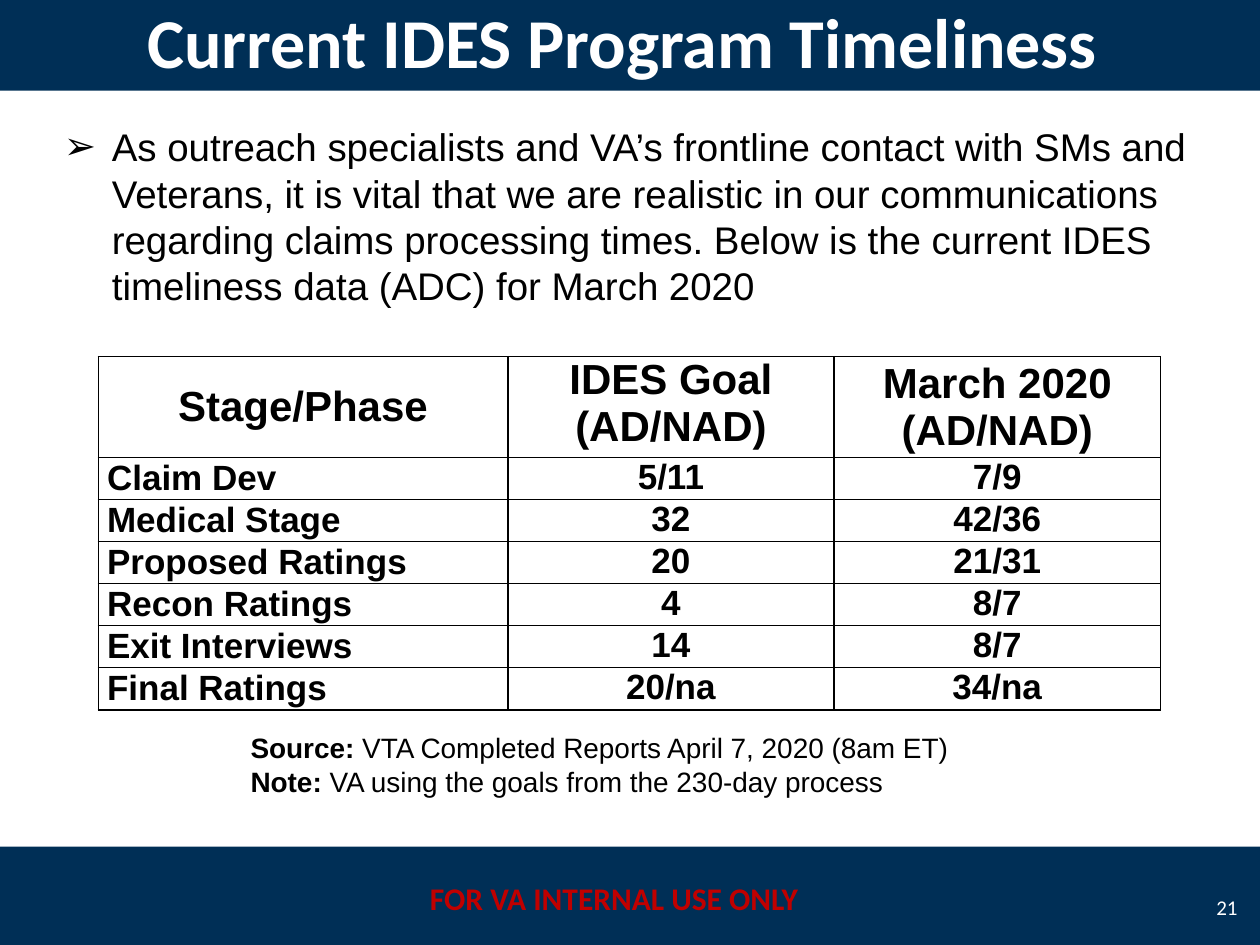
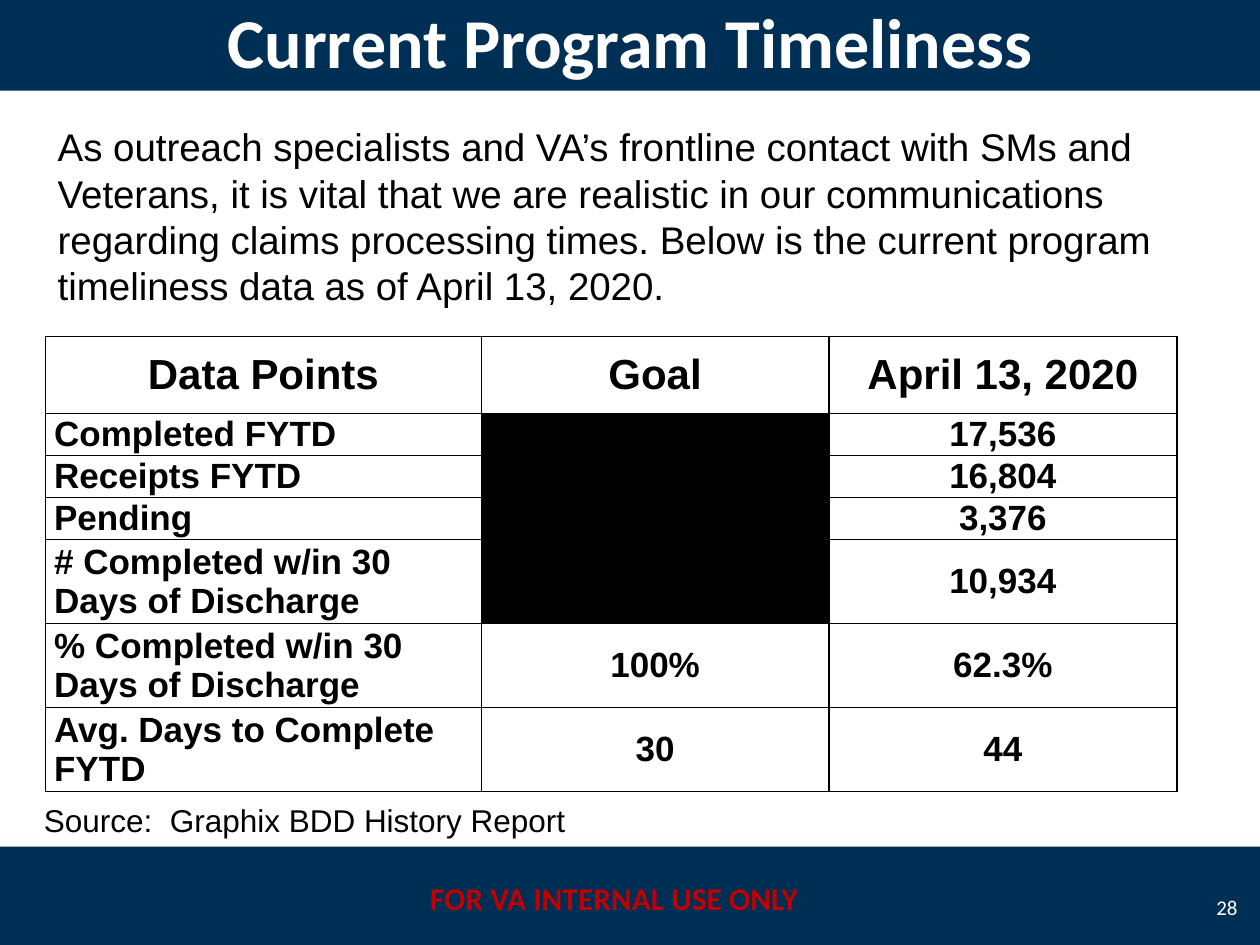
from dataclasses import dataclass
from lxml import etree
from pptx import Presentation
from pptx.dml.color import RGBColor
from pptx.enum.shapes import MSO_SHAPE
from pptx.enum.text import MSO_ANCHOR, PP_ALIGN
from pptx.oxml.ns import qn
from pptx.slide import Slide
from pptx.text.text import TextFrame
from pptx.util import Emu, Inches, Pt

NAVY = RGBColor(0x00, 0x2F, 0x56)
RED = RGBColor(0xC0, 0x00, 0x00)
WHITE = RGBColor(0xFF, 0xFF, 0xFF)
BLACK = RGBColor(0x00, 0x00, 0x00)

RECT = MSO_SHAPE.RECTANGLE
LEFT, MID, RIGHT = PP_ALIGN.LEFT, PP_ALIGN.CENTER, PP_ALIGN.RIGHT
TOP, CENTER = MSO_ANCHOR.TOP, MSO_ANCHOR.MIDDLE

# The page is a grid of 100 columns by 75 rows
WIDE, HIGH = Inches(10), Inches(7.5)
COL, ROW = WIDE // 100, HIGH // 75


@dataclass(frozen=True)
class Box:
    col: float
    row: float
    wide: float
    high: float

    def place(self) -> tuple[Emu, Emu, Emu, Emu]:
        return (Emu(int(self.col * COL)), Emu(int(self.row * ROW)),
                Emu(int(self.wide * COL)), Emu(int(self.high * ROW)))


@dataclass(frozen=True)
class Grid:
    box: Box
    cols: list[float]
    rows: list[float]
    cells: list[list[str | None]]  # None is a blacked-out cell
    tops: tuple[tuple[int, int], ...] = ()  # cells set at the top


@dataclass(frozen=True)
class Lead:
    """A line that opens with a bold label."""
    label: str
    rest: str


HEAD = Box(0, -0.8, 100, 8)
FOOT = Box(0, 67.2, 100, 8)
MARK = Box(32.5, 69.3, 32.5, 4)
PAGE = Box(95, 70, 4.2, 4)


def write(frame: TextFrame, *lines: str | Lead, size: float = 22,
          face: str = "Arial", color: RGBColor = BLACK, bold: bool = False,
          align: PP_ALIGN = LEFT, indent: float = 0, bullet: str = "") -> None:
    """Fill a frame, one paragraph for each line."""
    for i, line in enumerate(lines):
        para = frame.paragraphs[0] if i == 0 else frame.add_paragraph()
        para.alignment = align
        if indent:
            props = para._p.get_or_add_pPr()
            step = int(indent * COL)
            props.set("marL", str(step))
            props.set("indent", str(-step if bullet else 0))
            if bullet:
                etree.SubElement(props, qn("a:buFont")).set("typeface", face)
                etree.SubElement(props, qn("a:buChar")).set("char", bullet)
        if isinstance(line, Lead):
            parts = [(line.label, True), (line.rest, False)]
        else:
            parts = [(line, bold)]
        for text, heavy in parts:
            run = para.add_run()
            run.text = text
            font = run.font
            font.name, font.size, font.bold = face, Pt(size), heavy
            font.color.rgb = color


def label(slide: Slide, box: Box, *lines: str | Lead,
          anchor: MSO_ANCHOR = TOP, **style) -> None:
    frame = slide.shapes.add_textbox(*box.place()).text_frame
    frame.word_wrap = True
    frame.vertical_anchor = anchor
    write(frame, *lines, **style)


def band(slide: Slide, box: Box) -> None:
    shape = slide.shapes.add_shape(RECT, *box.place())
    shape.shadow.inherit = False
    shape.fill.solid()
    shape.fill.fore_color.rgb = NAVY
    shape.line.fill.background()


def edge(cell) -> None:
    """Draw a thin black line on all four sides of a cell."""
    props = cell._tc.get_or_add_tcPr()
    for side in ("lnL", "lnR", "lnT", "lnB"):
        line = etree.SubElement(props, qn(f"a:{side}"), w=str(Pt(1)))
        fill = etree.SubElement(line, qn("a:solidFill"))
        etree.SubElement(fill, qn("a:srgbClr")).set("val", str(BLACK))


def chart(slide: Slide, grid: Grid) -> None:
    table = slide.shapes.add_table(
        len(grid.rows), len(grid.cols), *grid.box.place()).table
    table.first_row = table.horz_banding = False
    for col, wide in zip(table.columns, grid.cols):
        col.width = Emu(int(wide * COL))
    for row, high in zip(table.rows, grid.rows):
        row.height = Emu(int(high * ROW))
    for r, texts in enumerate(grid.cells):
        for c, text in enumerate(texts):
            cell = table.cell(r, c)
            cell.margin_left = cell.margin_right = Inches(0.07)
            cell.margin_top = cell.margin_bottom = 0
            cell.vertical_anchor = TOP if (r, c) in grid.tops else CENTER
            edge(cell)
            if text is None:
                cell.fill.solid()
                cell.fill.fore_color.rgb = BLACK
                continue
            cell.fill.background()
            write(cell.text_frame, text, bold=True, size=20 if r else 24,
                  align=LEFT if r and c == 0 else MID)


def start(deck, title: str, page: int) -> Slide:
    """Add a slide with the shared bands, title, mark and page number."""
    slide = deck.slides.add_slide(deck.slide_layouts[6])
    for box in (FOOT, HEAD):
        band(slide, box)
    label(slide, MARK, "FOR VA INTERNAL USE ONLY", size=18, face="Calibri",
          color=RED, bold=True, align=MID)
    label(slide, PAGE, str(page), size=12, face="Calibri", color=WHITE,
          align=RIGHT, anchor=CENTER)
    label(slide, HEAD, title, size=40, face="Calibri", color=WHITE,
          bold=True, align=MID, anchor=CENTER)
    return slide


STAGES = Grid(
    Box(7.8, 28.3, 84.3, 28), [32.5, 25.9, 25.9], [8] + [3.33] * 6,
    [["Stage/Phase", "IDES Goal (AD/NAD)", "March 2020 (AD/NAD)"],
     ["Claim Dev", "5/11", "7/9"],
     ["Medical Stage", "32", "42/36"],
     ["Proposed Ratings", "20", "21/31"],
     ["Recon Ratings", "4", "8/7"],
     ["Exit Interviews", "14", "8/7"],
     ["Final Ratings", "20/na", "34/na"]],
    ((0, 1), *((r, c) for r in range(1, 7) for c in (1, 2))))

POINTS = Grid(
    Box(3.6, 26.7, 89.8, 36.1), [34.6, 27.6, 27.6],
    [6.1] + [3.33] * 3 + [6.67] * 3,
    [["Data Points", "Goal", "April 13, 2020"],
     ["Completed FYTD", None, "17,536"],
     ["Receipts FYTD", None, "16,804"],
     ["Pending", None, "3,376"],
     ["# Completed w/in 30 Days of Discharge", None, "10,934"],
     ["% Completed w/in 30 Days of Discharge", "100%", "62.3%"],
     ["Avg. Days to Complete FYTD", "30", "44"]])


def main() -> None:
    deck = Presentation()
    deck.slide_width, deck.slide_height = WIDE, HIGH

    # Stage goals against March results
    slide = start(deck, "Current IDES Program Timeliness ", 21)
    label(slide, Box(4.1, 9.3, 91.7, 15.8),
          "As outreach specialists and VA’s frontline contact with SMs and "
          "Veterans, it is vital that we are realistic in our communications "
          "regarding claims processing times. Below is the current IDES "
          "timeliness data (ADC) for March 2020", indent=3.8, bullet="➢")
    label(slide, Box(7.7, 57.5, 78.3, 6.4),
          Lead("Source:", " VTA Completed Reports April 7, 2020 (8am ET)"),
          Lead("Note:", " VA using the goals from the 230-day process"),
          size=16, indent=11.2)
    chart(slide, STAGES)

    # Program totals as of April
    slide = start(deck, "Current Program Timeliness", 28)
    label(slide, Box(3.6, 9.3, 95, 15.8),
          "As outreach specialists and VA’s frontline contact with SMs and",
          "Veterans, it is vital that we are realistic in our communications "
          "regarding claims processing times. Below is the current program "
          "timeliness data as of April 13, 2020.")
    chart(slide, POINTS)
    label(slide, Box(2.5, 63.1, 62.5, 4),
          "Source:  Graphix BDD History Report", size=18)

    deck.save("out.pptx")


if __name__ == "__main__":
    main()
